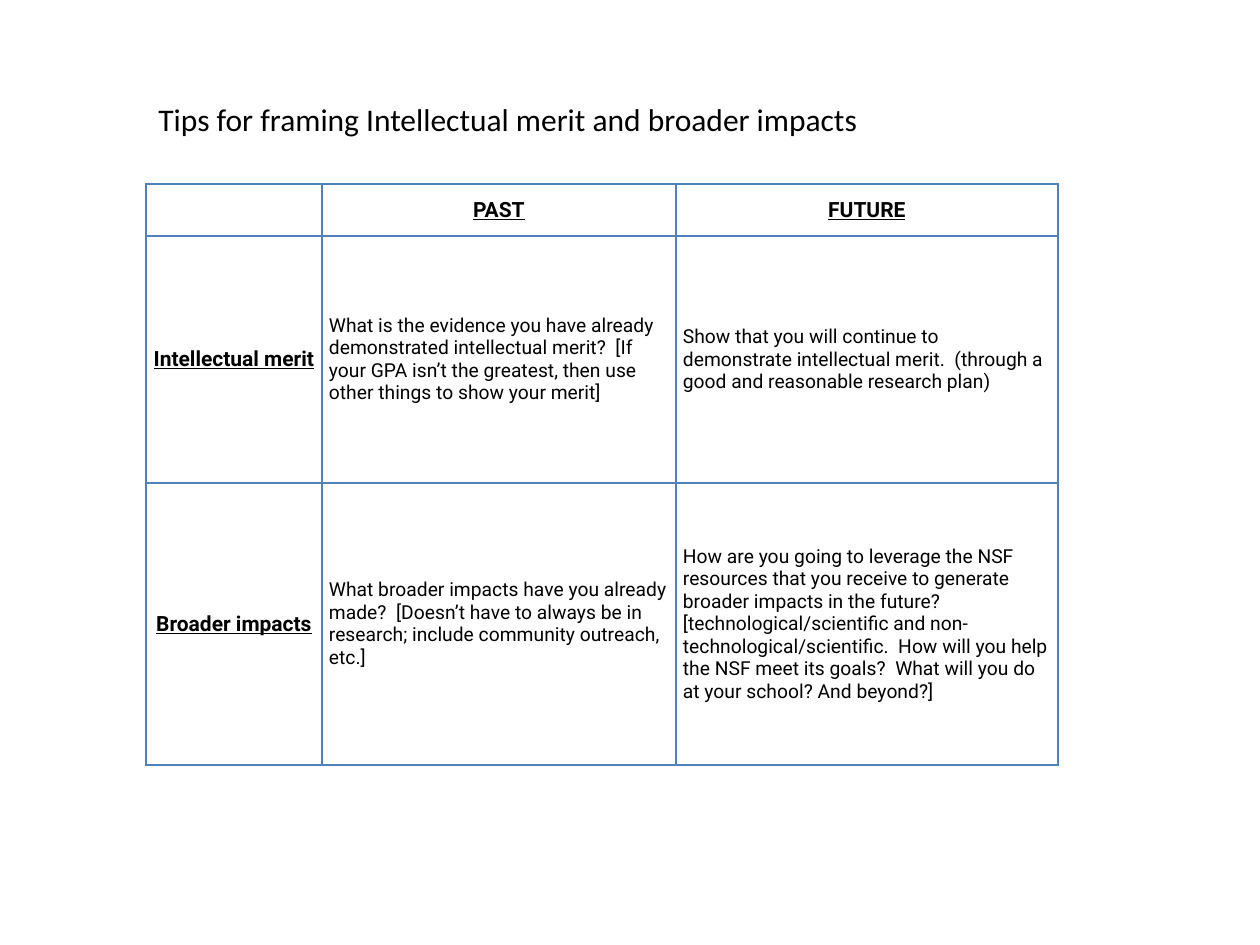
from lxml import etree
from pptx import Presentation
from pptx.dml.color import RGBColor
from pptx.enum.text import MSO_ANCHOR as Anchor, MSO_AUTO_SIZE as AutoSize, PP_ALIGN as Align
from pptx.oxml.ns import qn
from pptx.util import Pt

# Content: each cell is a list of paragraphs
TITLE = "Tips for framing Intellectual merit and broader impacts"
ROWS = [
    [[], ["PAST"], ["FUTURE"]],
    [
        ["Intellectual merit"],
        ["What is the evidence you have already demonstrated intellectual merit?  "
         "[If your GPA isn’t the greatest, then use other things to show your merit]"],
        ["Show that you will continue to demonstrate intellectual merit.  "
         "(through a good and reasonable research plan)"],
    ],
    [
        ["Broader impacts"],
        ["What broader impacts have you already made?  "
         "[Doesn’t have to always be in research; include community outreach, etc.]"],
        ["How are you going to leverage the NSF resources that you receive "
         "to generate broader impacts in the future?",
         "[technological/scientific and non-technological/scientific.  "
         "How will you help the NSF meet its goals?  "
         "What will you do at your school? And beyond?]"],
    ],
]
COLORS = {"text": "000000", "cell": "FFFFFF", "border": "4F81BD"}

# Layout in px
SCALE = 914400 / 126
LEFT, TITLE_TOP, TABLE_TOP = 146, 94, 184
TITLE_SIZE = (733, 50)
COL_WIDTHS = [176, 354, 382]
ROW_HEIGHTS = [52, 247, 282]
CELL_PAD = 7


def px(length):
    return round(length * SCALE)


def color(name):
    return RGBColor.from_string(COLORS[name])


def add_run(paragraph, text, size, face, heading=False):
    run = paragraph.add_run()
    run.text = text
    font = run.font
    font.size, font.name = Pt(size), face
    font.bold = font.underline = heading
    font.color.rgb = color("text")


def add_borders(cell):
    properties = cell._tc.get_or_add_tcPr()
    for index, side in enumerate(("lnL", "lnR", "lnT", "lnB")):
        line = etree.Element(qn(f"a:{side}"), w=str(Pt(1)))
        fill = etree.SubElement(line, qn("a:solidFill"))
        etree.SubElement(fill, qn("a:srgbClr"), val=COLORS["border"])
        properties.insert(index, line)


def fill_cell(cell, paragraphs, heading):
    cell.fill.solid()
    cell.fill.fore_color.rgb = color("cell")
    cell.margin_left = cell.margin_right = px(CELL_PAD)
    cell.margin_top = cell.margin_bottom = 0
    cell.vertical_anchor = Anchor.MIDDLE
    add_borders(cell)
    frame = cell.text_frame
    for index, text in enumerate(paragraphs):
        paragraph = frame.add_paragraph() if index else frame.paragraphs[0]
        paragraph.alignment = Align.CENTER if heading else Align.LEFT
        add_run(paragraph, text, 12 if heading else 11, "Roboto", heading)


def main():
    deck = Presentation()
    deck.slide_width, deck.slide_height = px(1260), px(945)
    slide = deck.slides.add_slide(deck.slide_layouts[6])

    # Table of tips
    tips = slide.shapes.add_table(
        len(ROWS), len(COL_WIDTHS), px(LEFT), px(TABLE_TOP),
        px(sum(COL_WIDTHS)), px(sum(ROW_HEIGHTS))).table
    for column, width in zip(tips.columns, COL_WIDTHS):
        column.width = px(width)
    for row, height in zip(tips.rows, ROW_HEIGHTS):
        row.height = px(height)
    for r, row in enumerate(ROWS):
        for c, paragraphs in enumerate(row):
            fill_cell(tips.cell(r, c), paragraphs, heading=r == 0 or c == 0)

    # Title
    title = slide.shapes.add_textbox(px(LEFT), px(TITLE_TOP), *map(px, TITLE_SIZE)).text_frame
    title.word_wrap = False
    title.auto_size = AutoSize.SHAPE_TO_FIT_TEXT
    add_run(title.paragraphs[0], TITLE, 18, "Calibri")

    deck.save("out.pptx")


if __name__ == "__main__":
    main()
